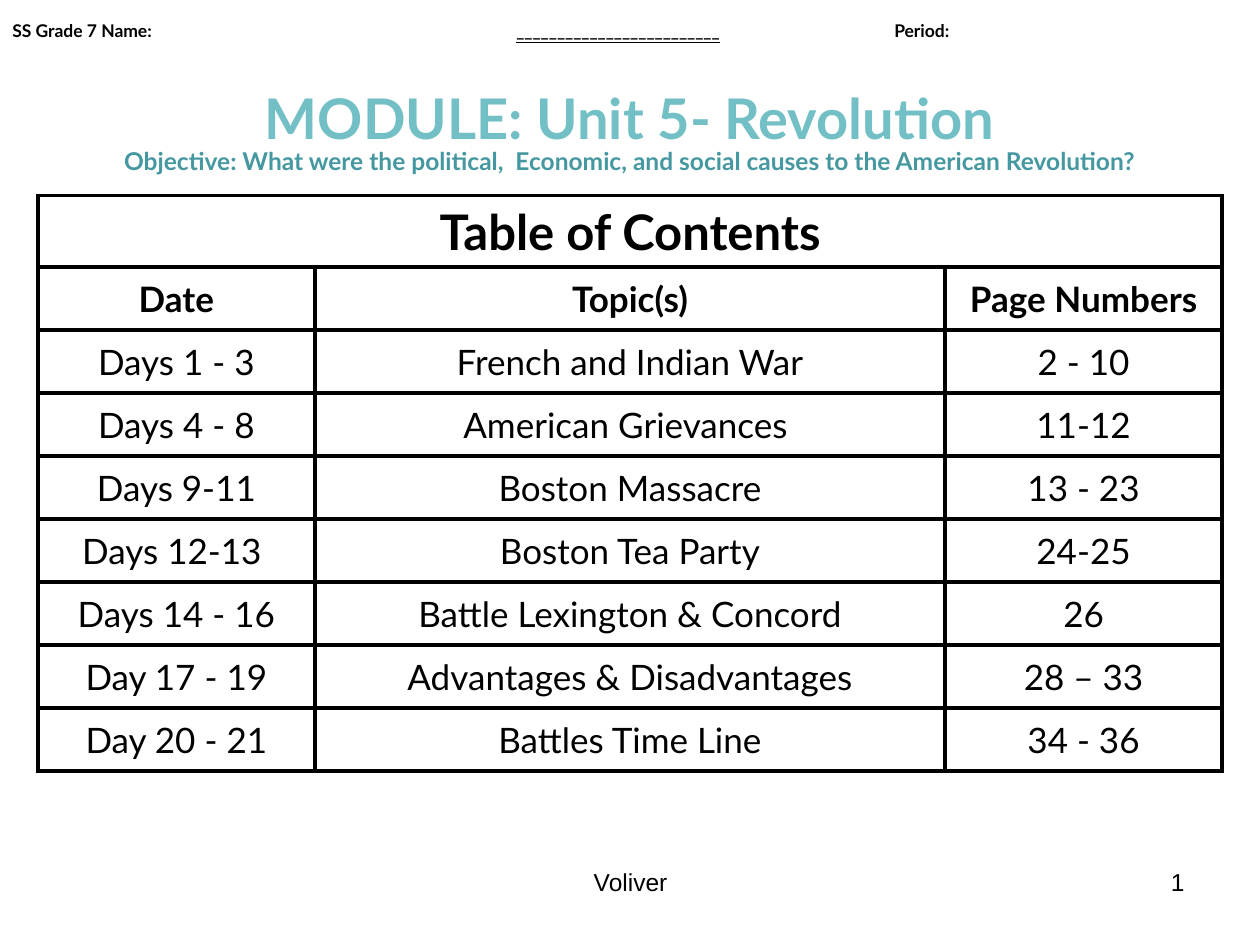
from lxml import etree
from pptx import Presentation
from pptx.dml.color import RGBColor
from pptx.enum.text import MSO_ANCHOR, PP_ALIGN
from pptx.oxml.ns import qn
from pptx.util import Inches, Pt

LEFT, CENTER, RIGHT = PP_ALIGN.LEFT, PP_ALIGN.CENTER, PP_ALIGN.RIGHT
MIDDLE = MSO_ANCHOR.MIDDLE
COLORS = {"text": "000000", "title": "72BFC5", "objective": "4597A0",
          "paper": "FFFFFF", "border": "000000"}
BORDER_WIDTH = Pt(2.25)

COLUMN_WIDTHS = [2.2, 5, 2.2]
HEADING_HEIGHT, ROW_HEIGHT = 0.57, 0.5
HEADERS = ("Date", "Topic(s)", "Page Numbers")
CONTENTS = [
    ("Days 1 - 3", "French and Indian War", "2 - 10"),
    ("Days 4 - 8", "American Grievances ", "11-12"),
    ("Days 9-11", "Boston Massacre", "13 - 23"),
    ("Days 12-13 ", "Boston Tea Party", "24-25"),
    ("Days 14 - 16", "Battle Lexington & Concord", "26"),
    ("Day 17 - 19", "Advantages & Disadvantages", "28 – 33"),
    ("Day 20 - 21", "Battles Time Line", "34 - 36"),
]


def write(paragraph, text, size=20, color="text", font="Lato", bold=False,
          underline=False, align=CENTER):
    paragraph.alignment = align
    run = paragraph.add_run()
    run.text = text
    run.font.size = Pt(size)
    run.font.name = font
    run.font.bold = bold
    run.font.underline = underline
    run.font.color.rgb = RGBColor.from_string(COLORS[color])


def add_text_frame(slide, box):
    text_frame = slide.shapes.add_textbox(*map(Inches, box)).text_frame
    text_frame.word_wrap = True
    return text_frame


def set_tab_stops(paragraph, positions):
    tab_list = etree.SubElement(paragraph._p.get_or_add_pPr(), qn("a:tabLst"))
    for position in positions:
        etree.SubElement(tab_list, qn("a:tab"), pos=str(Inches(position)), algn="l")


def set_borders(cell):
    properties = cell._tc.get_or_add_tcPr()
    for index, side in enumerate(("lnL", "lnR", "lnT", "lnB")):
        line = etree.Element(qn(f"a:{side}"), w=str(BORDER_WIDTH))
        fill = etree.SubElement(line, qn("a:solidFill"))
        etree.SubElement(fill, qn("a:srgbClr"), val=COLORS["border"])
        properties.insert(index, line)


def add_header(slide, box):
    text_frame = add_text_frame(slide, box)
    # Name and period line
    name_line = text_frame.paragraphs[0]
    for text, underline in (("SS Grade 7 Name:\t", False), ("_" * 25, True),
                            ("\tPeriod:", False)):
        write(name_line, text, size=10, bold=True, underline=underline, align=LEFT)
    set_tab_stops(name_line, (4, 7))
    # Module title
    title = text_frame.add_paragraph()
    title.space_before = Pt(24)
    write(title, "MODULE: Unit 5- Revolution", size=32, color="title", bold=True)


def add_line(slide, box, text, **text_format):
    write(add_text_frame(slide, box).paragraphs[0], text, **text_format)


def add_contents_table(slide, box):
    rows = [("Table of Contents", "", ""), HEADERS, *CONTENTS]
    table = slide.shapes.add_table(len(rows), len(HEADERS), *map(Inches, box)).table
    table.first_row = table.horz_banding = False
    for column, width in zip(table.columns, COLUMN_WIDTHS):
        column.width = Inches(width)
    for row_index, texts in enumerate(rows):
        is_heading = row_index == 0
        table.rows[row_index].height = Inches(HEADING_HEIGHT if is_heading else ROW_HEIGHT)
        for column_index, text in enumerate(texts):
            cell = table.cell(row_index, column_index)
            cell.vertical_anchor = MIDDLE
            cell.fill.solid()
            cell.fill.fore_color.rgb = RGBColor.from_string(COLORS["paper"])
            set_borders(cell)
            if text:
                write(cell.text_frame.paragraphs[0], text,
                      size=28 if is_heading else 20, bold=row_index < 2)
    table.cell(0, 0).merge(table.cell(0, len(HEADERS) - 1))


def main():
    presentation = Presentation()
    presentation.slide_width, presentation.slide_height = Inches(10), Inches(7.5)
    slide = presentation.slides.add_slide(presentation.slide_layouts[6])

    add_header(slide, (0, 0.11, 10, 1.14))
    add_line(slide, (0, 1.11, 10, 0.69),
             "Objective: What were the political,  Economic, and social causes "
             "to the American Revolution?", size=14, color="objective", bold=True)
    table_height = HEADING_HEIGHT + ROW_HEIGHT * (len(CONTENTS) + 1)
    add_contents_table(slide, (0.3, 1.55, sum(COLUMN_WIDTHS), table_height))

    # Footer
    add_line(slide, (7.17, 6.83, 2.33, 0.52), "1", size=14, font="Arial", align=RIGHT)
    add_line(slide, (3.42, 6.83, 3.17, 0.52), "Voliver", size=14, font="Arial")

    presentation.save("out.pptx")


if __name__ == "__main__":
    main()
